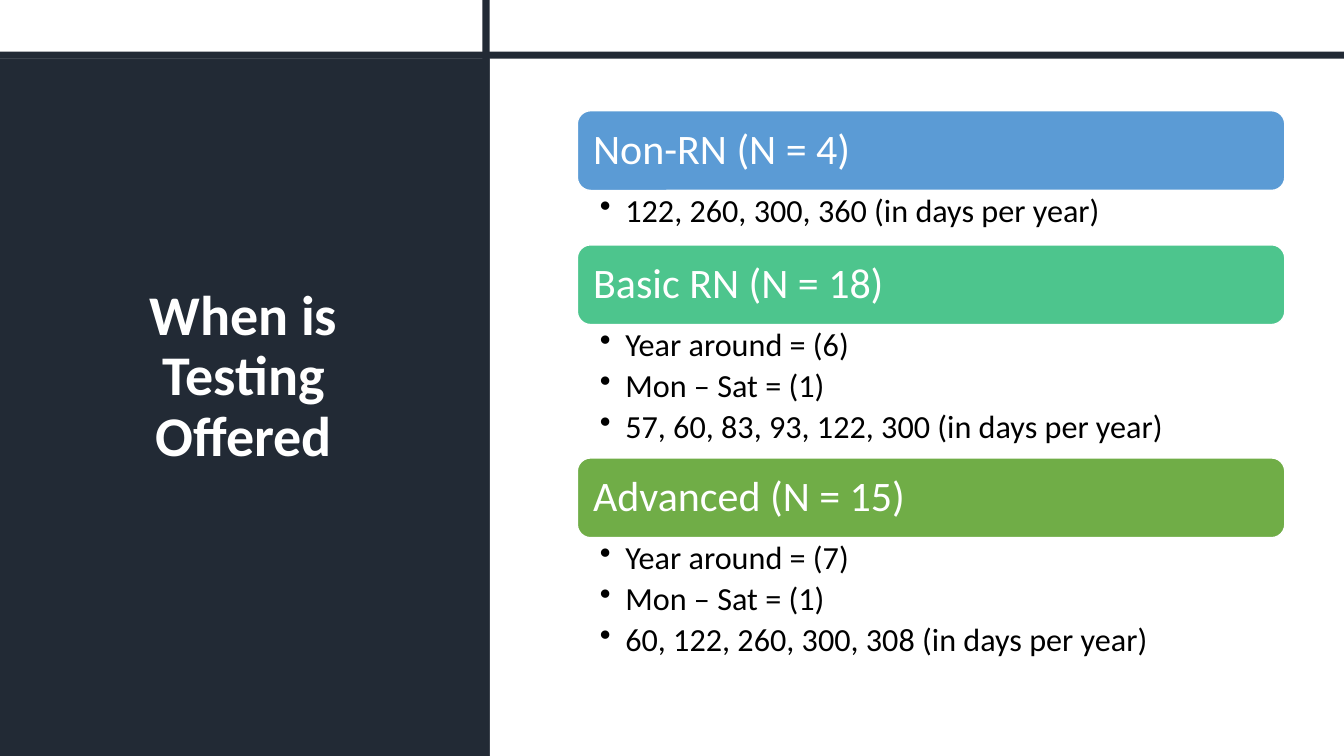
"""Build the slide on when testing is offered, by nurse group."""
from lxml import etree
from pptx import Presentation
from pptx.dml.color import RGBColor
from pptx.enum.shapes import MSO_SHAPE
from pptx.enum.text import MSO_ANCHOR, MSO_AUTO_SIZE, PP_ALIGN
from pptx.oxml.ns import qn
from pptx.util import Cm, Pt

RECT, ROUND = MSO_SHAPE.RECTANGLE, MSO_SHAPE.ROUNDED_RECTANGLE
TOP, MIDDLE = MSO_ANCHOR.TOP, MSO_ANCHOR.MIDDLE
LEFT, CENTER = PP_ALIGN.LEFT, PP_ALIGN.CENTER
FIXED = MSO_AUTO_SIZE.NONE
NAVY = RGBColor(0x22, 0x2A, 0x35)
WHITE = RGBColor(0xFF, 0xFF, 0xFF)
BLACK = RGBColor(0, 0, 0)
BLUE = RGBColor(0x5B, 0x9B, 0xD5)
TEAL = RGBColor(0x4D, 0xC5, 0x8D)
GREEN = RGBColor(0x70, 0xAD, 0x47)

WIDE, HIGH = 33.87, 19.05
LINE = 0.18
EDGE, SPAN, BAND = 14.55, 17.83, 2.01

TITLE = {"size": Pt(40), "bold": True, "color": WHITE, "align": CENTER,
         "after": Pt(0), "anchor": MIDDLE, "sides": Cm(0.25), "ends": Cm(0.13)}
HEAD = {"size": Pt(30), "bold": False, "color": WHITE, "align": LEFT,
        "after": Pt(0), "anchor": MIDDLE, "sides": Cm(0.3), "ends": Cm(0.3)}
ITEM = {"size": Pt(23), "bold": False, "color": BLACK, "align": LEFT,
        "after": Pt(4.4), "anchor": TOP, "sides": Cm(0.57), "ends": Cm(0.1)}

GROUPS = [
    ("Non-RN (N = 4)", BLUE, 1.37,
     ["122, 260, 300, 360 (in days per year)"]),
    ("Basic RN (N = 18)", TEAL, 3.36,
     ["Year around = (6)", "Mon – Sat = (1)",
      "57, 60, 83, 93, 122, 300 (in days per year)"]),
    ("Advanced (N = 15)", GREEN, 3.36,
     ["Year around = (7)", "Mon – Sat = (1)",
      "60, 122, 260, 300, 308 (in days per year)"]),
]


def add_block(kind, box, fill):
    block = slide.shapes.add_shape(kind, *map(Cm, box))
    block.shadow.inherit = False
    block.fill.solid()
    block.fill.fore_color.rgb = fill
    block.line.fill.background()
    return block


def write(shape, lines, style):
    frame = shape.text_frame
    frame.text = "\n".join(lines)
    look = {"word_wrap": True, "auto_size": FIXED,
            "vertical_anchor": style["anchor"],
            "margin_left": style["sides"], "margin_right": style["sides"],
            "margin_top": style["ends"], "margin_bottom": style["ends"]}
    for name, value in look.items():
        setattr(frame, name, value)
    for para in frame.paragraphs:
        rules = {"alignment": style["align"], "line_spacing": 0.9,
                 "space_before": Pt(0), "space_after": style["after"]}
        for name, value in rules.items():
            setattr(para, name, value)
        for name in ("size", "bold"):
            setattr(para.runs[0].font, name, style[name])
        para.runs[0].font.name = "Calibri"
        para.runs[0].font.color.rgb = style["color"]


deck = Presentation()
deck.slide_width, deck.slide_height = Cm(WIDE), Cm(HIGH)
slide = deck.slides.add_slide(deck.slide_layouts[5])

panel = add_block(RECT, (0, 1.47, 12.34, 17.58), NAVY)
add_block(RECT, (12.16, 0, LINE, HIGH), NAVY)
add_block(RECT, (0, 1.3, WIDE, LINE), NAVY)

title = slide.shapes.title
place = {"left": Cm(1.68), "top": Cm(2.13), "width": Cm(8.92), "height": Cm(14.78)}
for name, value in place.items():
    setattr(title, name, value)
write(title, ["When is Testing Offered"], TITLE)
panel.element.addnext(title.element)

top = 2.79
for head, fill, tall, items in GROUPS:
    band = add_block(ROUND, (EDGE, top, SPAN, BAND), fill)
    band.line.color.rgb = WHITE
    band.line.width = Pt(1)
    write(band, [head], HEAD)
    top += BAND
    text = slide.shapes.add_textbox(Cm(EDGE), Cm(top), Cm(SPAN), Cm(tall))
    write(text, items, ITEM)
    for props in text.element.iter(qn("a:pPr")):
        props.set("marL", str(Cm(0.64)))
        props.set("indent", str(Cm(-0.64)))
        etree.SubElement(props, qn("a:buChar")).set("char", "•")
    top += tall

deck.save("out.pptx")
